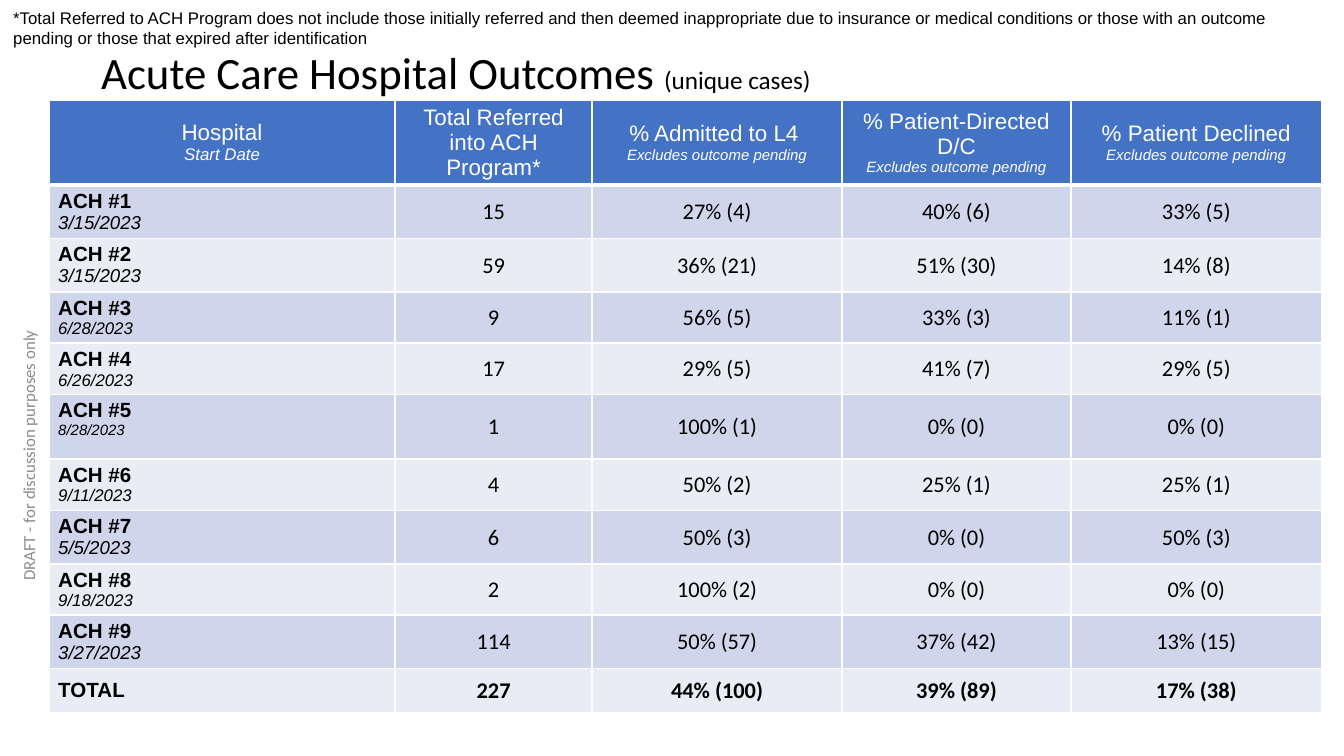
"""Build the Acute Care Hospital Outcomes slide with its table of referrals."""
from lxml.etree import SubElement
from pptx import Presentation
from pptx.dml.color import RGBColor
from pptx.enum.text import MSO_ANCHOR, MSO_AUTO_SIZE, PP_ALIGN
from pptx.oxml.ns import qn
from pptx.util import Pt

BLACK = RGBColor(0x00, 0x00, 0x00)
WHITE = RGBColor(0xFF, 0xFF, 0xFF)
GREY = RGBColor(0x8C, 0x8C, 0x8C)
HEADER_BLUE = RGBColor(0x44, 0x72, 0xC4)
BANDS = [RGBColor(0xCF, 0xD5, 0xEA), RGBColor(0xE9, 0xEB, 0xF5)]

PENDING = "Excludes outcome pending"
HEADINGS = [
    ("Hospital", "Start Date", 9),
    ("Total Referred into ACH Program*", "", 8),
    ("% Admitted to L4 ", PENDING, 8),
    ("% Patient-Directed D/C", PENDING, 8),
    ("% Patient Declined", PENDING, 8),
]
HOSPITALS = [
    ("ACH #1", "3/15/2023", 10, 26, "15", "27% (4)", "40% (6)", "33% (5)"),
    ("ACH #2", "3/15/2023", 10, 26, "59", "36% (21)", "51% (30)", "14% (8)"),
    ("ACH #3", "6/28/2023", 9, 24.5, "9", "56% (5)", "33% (3)", "11% (1)"),
    ("ACH #4", "6/26/2023", 9, 24.5, "17", "29% (5)", "41% (7)", "29% (5)"),
    ("ACH #5", "8/28/2023", 8, 34.6, "1", "100% (1)", "0% (0)", "0% (0)"),
    ("ACH #6", "9/11/2023", 9, 24.5, "4", "50% (2)", "25% (1)", "25% (1)"),
    ("ACH #7", "5/5/2023", 10, 26, "6", "50% (3)", "0% (0)", "50% (3)"),
    ("ACH #8", "9/18/2023", 9, 24.5, "2", "100% (2)", "0% (0)", "0% (0)"),
    ("ACH #9", "3/27/2023", 10, 26, "114", "50% (57)", "37% (42)", "13% (15)"),
    ("TOTAL", "", 10, 23.8, "227", "44% (100)", "39% (89)", "17% (38)"),
]


def write(paragraph, text, size, font="Arial", color=BLACK, bold=False,
          italic=False, align=PP_ALIGN.LEFT):
    paragraph.alignment = align
    run = paragraph.add_run()
    run.text = text
    run.font.size = Pt(size)
    run.font.name = font
    run.font.color.rgb = color
    run.font.bold = bold
    run.font.italic = italic


def format_cell(cell, fill, margins, bottom_width=1):
    for side, width in (("L", 1), ("R", 1), ("T", 1), ("B", bottom_width)):
        border = SubElement(cell._tc.get_or_add_tcPr(), qn(f"a:ln{side}"), w=str(Pt(width)))
        SubElement(SubElement(border, qn("a:solidFill")), qn("a:srgbClr"), val=str(WHITE))
    cell.fill.solid()
    cell.fill.fore_color.rgb = fill
    cell.vertical_anchor = MSO_ANCHOR.MIDDLE
    cell.margin_left, cell.margin_top, cell.margin_right, cell.margin_bottom = map(Pt, margins)


presentation = Presentation()
presentation.slide_width, presentation.slide_height = Pt(720), Pt(405)
slide = presentation.slides.add_slide(presentation.slide_layouts[5])

title = slide.shapes.title
title.left, title.top, title.width, title.height = Pt(47), Pt(18), Pt(660), Pt(44)
title.text_frame.auto_size = MSO_AUTO_SIZE.NONE
title.text_frame.vertical_anchor = MSO_ANCHOR.MIDDLE
heading = title.text_frame.paragraphs[0]
heading.line_spacing = 0.9
write(heading, "Acute Care Hospital Outcomes ", 24, font="Calibri")
write(heading, "(unique cases)", 13.5, font="Calibri")

outcomes = slide.shapes.add_table(
    len(HOSPITALS) + 1, len(HEADINGS), Pt(26.2), Pt(53.6), Pt(681), Pt(343)).table
for column, width in zip(outcomes.columns, (185.5, 105.5, 134, 122.5, 134.5)):
    column.width = Pt(width)
outcomes.rows[0].height = Pt(36.7)

LABEL_MARGINS = (5, 2.6, 5, 2.6)
FIGURE_MARGINS = (0.5, 0.5, 0.5, 0)
for cell, (label, detail, detail_size) in zip(outcomes.rows[0].cells, HEADINGS):
    format_cell(cell, HEADER_BLUE, LABEL_MARGINS, bottom_width=3)
    write(cell.text_frame.paragraphs[0], label, 12, color=WHITE, align=PP_ALIGN.CENTER)
    if detail:
        write(cell.text_frame.add_paragraph(), detail, detail_size, color=WHITE,
              italic=True, align=PP_ALIGN.CENTER)

for index, (hospital, start, start_size, height, *figures) in enumerate(HOSPITALS, 1):
    outcomes.rows[index].height = Pt(height)
    band = BANDS[(index - 1) % 2]
    label_cell = outcomes.cell(index, 0)
    format_cell(label_cell, band, LABEL_MARGINS)
    write(label_cell.text_frame.paragraphs[0], hospital, 11, bold=True)
    if start:
        label_cell.vertical_anchor = MSO_ANCHOR.TOP
        write(label_cell.text_frame.add_paragraph(), start, start_size, italic=True)
    for column, figure in enumerate(figures, 1):
        figure_cell = outcomes.cell(index, column)
        format_cell(figure_cell, band, FIGURE_MARGINS)
        write(figure_cell.text_frame.paragraphs[0], figure, 12, font="Calibri",
              bold=hospital == "TOTAL", align=PP_ALIGN.CENTER)

footnote = slide.shapes.add_textbox(Pt(0), Pt(0), Pt(716), Pt(29.5))
footnote.text_frame.word_wrap = True
footnote.text_frame.vertical_anchor = MSO_ANCHOR.MIDDLE
write(footnote.text_frame.paragraphs[0],
      "*Total Referred to ACH Program does not include those initially referred and then "
      "deemed inappropriate due to insurance or medical conditions or those with an outcome "
      "pending or those that expired after identification", 9)

draft_note = slide.shapes.add_textbox(Pt(-106.5), Pt(233.3), Pt(243.4), Pt(21.6))
draft_note.rotation = 270
draft_note.text_frame.word_wrap = True
draft_note.text_frame.vertical_anchor = MSO_ANCHOR.MIDDLE
write(draft_note.text_frame.paragraphs[0], "DRAFT - for discussion purposes only", 9,
      font="Calibri", color=GREY, align=PP_ALIGN.CENTER)

presentation.save("out.pptx")
